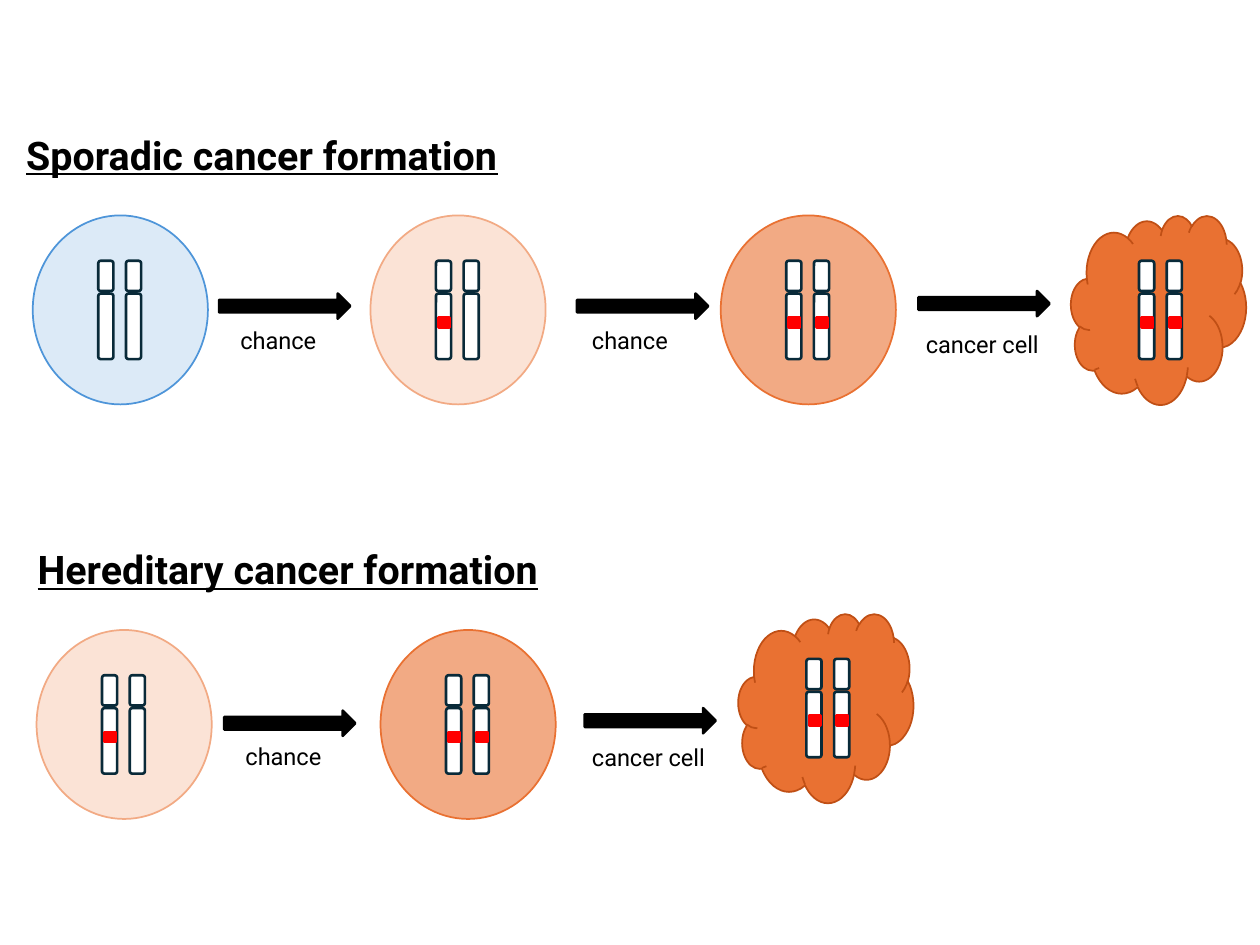
from dataclasses import dataclass

from pptx import Presentation
from pptx.dml.color import RGBColor
from pptx.enum import shapes, text
from pptx.util import Inches, Pt


@dataclass(frozen=True)
class Theme:
    font: str = "Roboto"
    title_size: float = 22.5
    label_size: float = 13.5
    black: str = "000000"
    white: str = "FFFFFF"
    outline: str = "092A39"
    mutation: str = "FF0000"


theme = Theme()
SHAPE = shapes.MSO_SHAPE
CELL_STYLES = {
    "healthy": (SHAPE.FLOWCHART_CONNECTOR, "DCEAF7", "4E95D9", 0.52, 0),
    "one hit": (SHAPE.FLOWCHART_CONNECTOR, "FBE3D6", "F2AA84", 0.52, 1),
    "two hits": (SHAPE.FLOWCHART_CONNECTOR, "F2AA84", "E97132", 0.52, 2),
    "cancer": (SHAPE.CLOUD, "E97132", "C04F15", 0.54, 2),
}
PATHWAYS = [
    {
        "title": ("Sporadic cancer formation", 0.11, 0.99),
        "cells": [("healthy", 0.26, 1.71), ("one hit", 2.94, 1.71),
                  ("two hits", 5.72, 1.71), ("cancer", 8.5, 1.71)],
        "arrows": [(1.74, 2.33), (4.58, 2.33), (7.29, 2.31)],
        "labels": [("chance", 1.81, 2.54), ("chance", 4.6, 2.54),
                   ("cancer cell", 7.25, 2.57)],
    },
    {
        "title": ("Hereditary cancer formation", 0.2, 4.28),
        "cells": [("one hit", 0.29, 5), ("two hits", 3.02, 5),
                  ("cancer", 5.86, 4.87)],
        "arrows": [(1.78, 5.64), (4.64, 5.62)],
        "labels": [("chance", 1.85, 5.84), ("cancer cell", 4.6, 5.85)],
    },
]


def add_part(group, kind, left, top, width, height, fill, line, weight=1.5):
    part = group.shapes.add_shape(
        kind, Inches(left), Inches(top), Inches(width), Inches(height))
    part.shadow.inherit = False
    part.fill.solid()
    part.fill.fore_color.rgb = RGBColor.from_string(fill)
    part.line.color.rgb = RGBColor.from_string(line)
    part.line.width = Pt(weight)


def add_text(group, words, left, top, width, height, size, heading=False):
    box = group.shapes.add_textbox(
        Inches(left), Inches(top), Inches(width), Inches(height))
    box.text_frame.word_wrap = True
    box.text_frame.auto_size = text.MSO_AUTO_SIZE.SHAPE_TO_FIT_TEXT
    para = box.text_frame.paragraphs[0]
    para.text = words
    para.font.name = theme.font
    para.font.size = Pt(size)
    para.font.color.rgb = RGBColor.from_string(theme.black)
    para.font.bold = heading
    para.font.underline = heading


deck = Presentation()
deck.slide_width = Inches(10)
deck.slide_height = Inches(7.5)
page = deck.slides.add_slide(deck.slide_layouts[6])

for pathway in PATHWAYS:
    group = page.shapes.add_group_shape()
    add_text(group, *pathway["title"], 5.26, 0.5, theme.title_size, heading=True)

    for left, top in pathway["arrows"]:
        add_part(group, SHAPE.RIGHT_ARROW, left, top, 1.04, 0.2,
                 theme.black, theme.black)

    for style, left, top in pathway["cells"]:
        kind, fill, line, inset, mutations = CELL_STYLES[style]
        add_part(group, kind, left, top, 1.39, 1.5, fill, line, weight=1)
        for index in range(2):
            arm_left = left + inset + 0.22 * index
            for offset, height in ((0.36, 0.24), (0.62, 0.52)):
                add_part(group, SHAPE.ROUNDED_RECTANGLE, arm_left, top + offset,
                         0.12, height, theme.white, theme.outline)
            if index < mutations:
                add_part(group, SHAPE.RECTANGLE, arm_left + 0.02, top + 0.81,
                         0.09, 0.08, theme.mutation, theme.mutation)

    for words, left, top in pathway["labels"]:
        add_text(group, words, left, top, 1.63, 0.34, theme.label_size)

deck.save("out.pptx")
